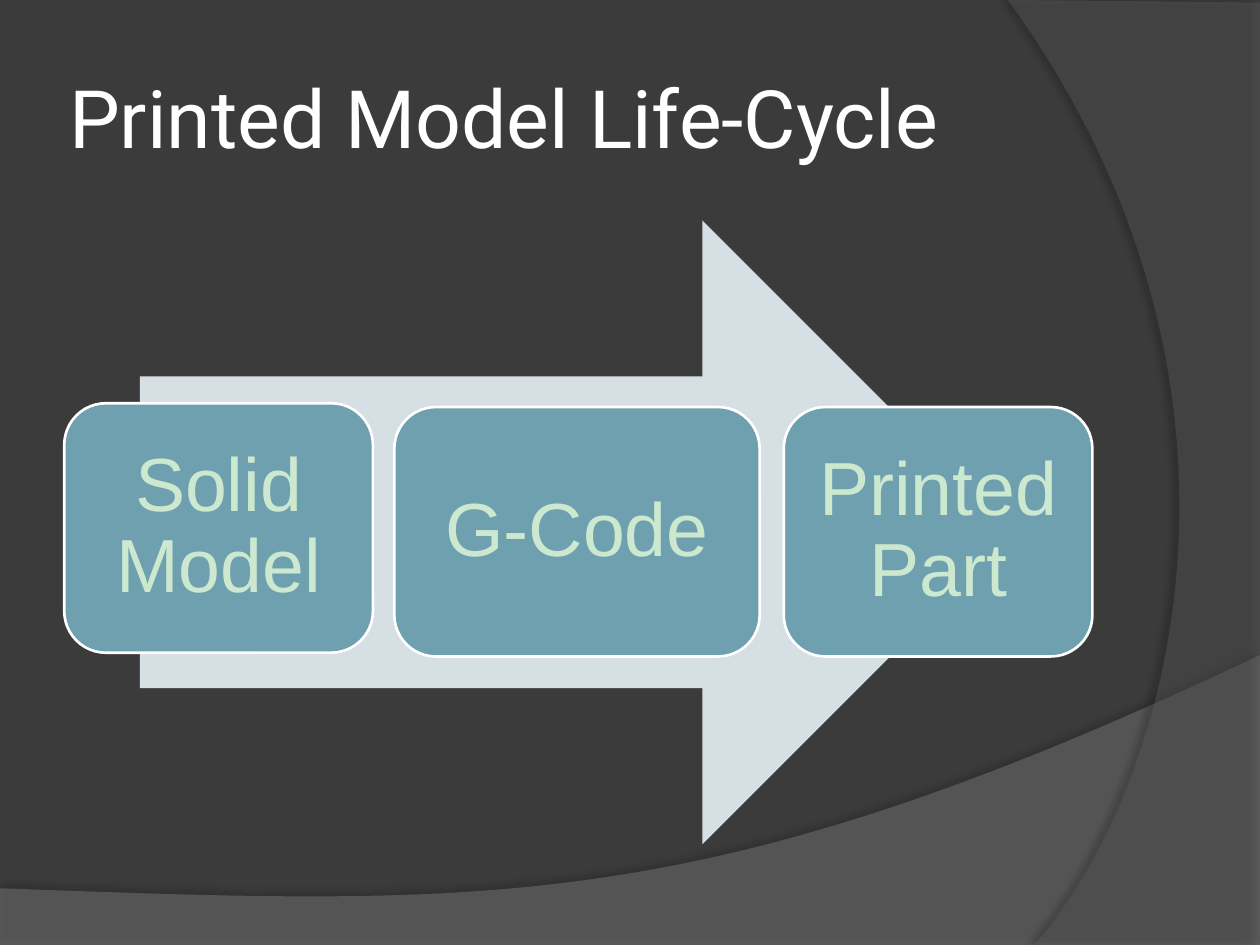
"""Builds the Printed Model Life-Cycle slide: three stages along a wide arrow."""
from lxml.etree import SubElement
from pptx import Presentation
from pptx.dml.color import RGBColor as Rgb
from pptx.enum.shapes import MSO_SHAPE as Preset
from pptx.enum.text import MSO_ANCHOR as Anchor, PP_ALIGN as Align
from pptx.oxml.ns import qn
from pptx.util import Inches, Pt

THEME = {
    "background": Rgb(0x3B, 0x3B, 0x3B),
    "wave": Rgb(0x7F, 0x7F, 0x7F),
    "crescent": Rgb(0x5E, 0x5E, 0x5E),
    "arrow": Rgb(0xD5, 0xDF, 0xE4),
    "stage": Rgb(0x6E, 0xA0, 0xB0),
    "stage_text": Rgb(0xCC, 0xE8, 0xCF),
    "white": Rgb(0xFF, 0xFF, 0xFF),
    "title_font": "Roboto",
    "title_size": Pt(46),
    "stage_font": "Arial",
    "stage_size": Pt(43),
}
CURVE_STEPS = 60

deck = Presentation()
deck.slide_width, deck.slide_height = Inches(10), Inches(7.5)
slide = deck.slides.add_slide(deck.slide_layouts[6])
slide.background.fill.solid()
slide.background.fill.fore_color.rgb = THEME["background"]


def place(x, y, *size):
    """Turn percentages of the slide into lengths."""
    return [round(share * side / 100) for share, side in
            zip((x, y, *size), (deck.slide_width, deck.slide_height) * 2)]


def write(frame, words, font, size, color, inset):
    """Put one styled run in a vertically centred frame."""
    frame.word_wrap = True
    frame.vertical_anchor = Anchor.MIDDLE
    frame.margin_left = frame.margin_right = inset
    frame.margin_top = frame.margin_bottom = inset
    paragraph = frame.paragraphs[0]
    run = paragraph.add_run()
    run.text = words
    run.font.name, run.font.size = font, size
    run.font.color.rgb = color
    return paragraph


swooshes = [
    ("wave", 45, [(0, 100), (100, 100), (100, 69.33)],
     [(100, 69.33), (55.9, 97.2), (39.1, 95.87), (0, 94)], 35, 3.5, 270),
    ("crescent", 40, [(100, 0.27), (100, 100), (82.1, 100)],
     [(82.1, 100), (93.5, 82.53), (101.8, 40), (80, 0)], 45, 4, 180),
]
for part, opacity, corners, controls, shade, distance, angle in swooshes:
    curve = []
    for step in range(1, CURVE_STEPS + 1):
        t = step / CURVE_STEPS
        weights = ((1 - t) ** 3, 3 * t * (1 - t) ** 2, 3 * t ** 2 * (1 - t), t ** 3)
        curve.append([sum(w * point[axis] for w, point in zip(weights, controls))
                      for axis in (0, 1)])
    outline = slide.shapes.build_freeform(*place(*corners[0]))
    outline.add_line_segments([place(*point) for point in corners[1:] + curve])
    swoosh = outline.convert_to_shape()
    swoosh.fill.solid()
    swoosh.fill.fore_color.rgb = THEME[part]
    swoosh.line.fill.background()
    swoosh.shadow.inherit = False
    properties = swoosh.element.spPr
    tint = properties.find(qn("a:solidFill")).find(qn("a:srgbClr"))
    SubElement(tint, qn("a:alpha"), val=str(opacity * 1000))
    shadow = SubElement(properties.find(qn("a:effectLst")), qn("a:outerShdw"),
                        blurRad=str(Pt(4)), dist=str(Pt(distance)),
                        dir=str(angle * 60000), algn="ctr", rotWithShape="0")
    black = SubElement(shadow, qn("a:srgbClr"), val="000000")
    SubElement(black, qn("a:alpha"), val=str(shade * 1000))

title = slide.shapes.add_textbox(*place(5, 4, 81.7, 16.67))
write(title.text_frame, "Printed Model Life-Cycle", THEME["title_font"],
      THEME["title_size"], THEME["white"], Inches(0.05))

arrow = slide.shapes.add_shape(Preset.RIGHT_ARROW, *place(11.1, 23.33, 69.4, 66))
arrow.fill.solid()
arrow.fill.fore_color.rgb = THEME["arrow"]
arrow.line.fill.background()
arrow.shadow.inherit = False

stages = [
    ("Solid Model", 5.1, 42.67, 24.5),
    ("G-Code", 31.3, 43.07, 29),
    ("Printed Part", 62.2, 43.07, 24.5),
]
for words, left, top, width in stages:
    stage = slide.shapes.add_shape(Preset.ROUNDED_RECTANGLE, *place(left, top, width, 26.4))
    stage.fill.solid()
    stage.fill.fore_color.rgb = THEME["stage"]
    stage.line.color.rgb = THEME["white"]
    stage.line.width = Pt(1.5)
    stage.shadow.inherit = False
    label = write(stage.text_frame, words, THEME["stage_font"],
                  THEME["stage_size"], THEME["stage_text"], Inches(0.1))
    label.alignment = Align.CENTER
    label.line_spacing = 0.9

deck.save("out.pptx")
